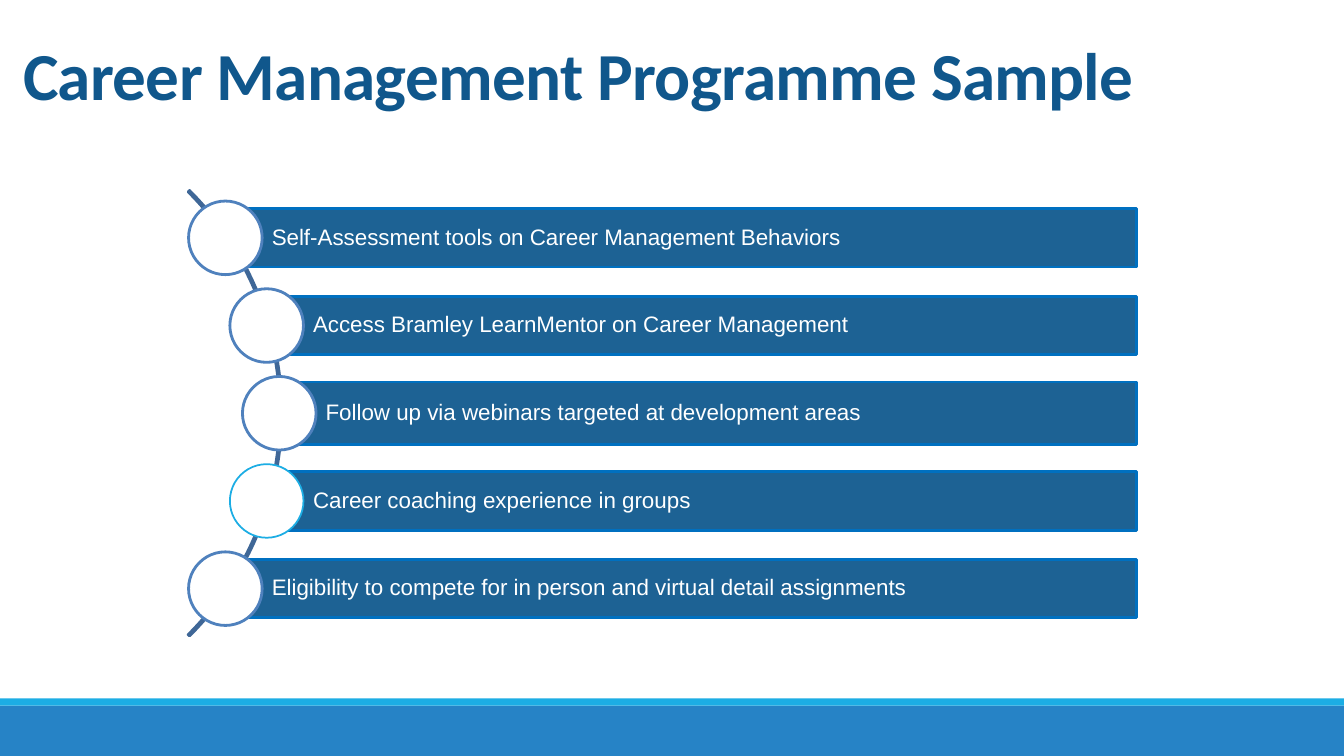
"""Build the career management programme slide."""
from math import sqrt
from pptx import Presentation
from pptx.dml.color import RGBColor
from pptx.enum import shapes, text
from pptx.oxml.ns import qn
from pptx.util import Inches, Pt

TITLE = "Career Management Programme Sample"
STEPS = [
    "Self-Assessment tools on Career Management Behaviors",
    "Access Bramley LearnMentor on Career Management",
    "Follow up via webinars targeted at development areas",
    "Career coaching experience in groups",
    "Eligibility to compete for in person and virtual detail assignments",
]
NAVY = RGBColor(0x10, 0x57, 0x8C)
STEEL = RGBColor(0x1D, 0x62, 0x94)
EDGE = RGBColor(0x00, 0x70, 0xC0)
SLATE = RGBColor(0x3F, 0x67, 0x97)
RING = RGBColor(0x4F, 0x81, 0xBD)
CYAN = RGBColor(0x1C, 0xAD, 0xE4)
BLUE = RGBColor(0x26, 0x83, 0xC6)
WHITE = RGBColor(0xFF, 0xFF, 0xFF)
PLAIN = "{2D5ABB26-0587-4C30-8999-92F81FD0307C}"

WIDE, HIGH = 13.33, 7.5
ARC_X, ARC_Y, ARC_D = -0.33, 4.1, 6.25
TRACK, GAP, DOT = 3.1, 0.87, 0.73
RIGHT, MIDDLE, ACCENT = 11.27, 2, 3

deck = Presentation()
deck.slide_width, deck.slide_height = Inches(WIDE), Inches(HIGH)
slide = deck.slides.add_slide(deck.slide_layouts[6])


def draw(kind, x, y, w, h, fill=None, line=None, size=2):
    """Add a flat shape with the given fill and line."""
    shape = slide.shapes.add_shape(kind, Inches(x), Inches(y), Inches(w), Inches(h))
    shape.shadow.inherit = False
    if fill is None:
        shape.fill.background()
    else:
        shape.fill.solid()
        shape.fill.fore_color.rgb = fill
    if line is None:
        shape.line.fill.background()
    else:
        shape.line.color.rgb = line
        shape.line.width = Pt(size)
    return shape


def write(shape, words, face, size, color, bold=False):
    """Put one left-aligned line, centred in height, in a shape."""
    frame = shape.text_frame
    frame.word_wrap = True
    frame.vertical_anchor = text.MSO_ANCHOR.MIDDLE
    para = frame.paragraphs[0]
    para.text = words
    para.alignment = text.PP_ALIGN.LEFT
    para.line_spacing = 0.9
    font = para.font
    font.name, font.size, font.bold = face, Pt(size), bold
    font.color.rgb = color
    return para


KIND = shapes.MSO_SHAPE
draw(KIND.RECTANGLE, 0, 7, WIDE, 0.5, BLUE)
draw(KIND.RECTANGLE, 0, 6.93, WIDE, 0.07, CYAN)

title = slide.shapes.add_textbox(Inches(0.13), Inches(0.49), Inches(11.48), Inches(0.59))
head = write(title, TITLE, "Calibri", 48, NAVY, True)
head.font._rPr.set("spc", "-50")

grid = slide.shapes.add_table(1, 1, Inches(0.64), Inches(3.9), Inches(8.89), Inches(0.41)).table
grid.first_row = grid.horz_banding = False
grid._tbl.tblPr.find(qn("a:tableStyleId")).text = PLAIN
grid.cell(0, 0).fill.background()

arc = draw(KIND.BLOCK_ARC, ARC_X - ARC_D / 2, ARC_Y - ARC_D / 2, ARC_D, ARC_D, line=SLATE)
for i, value in enumerate((189, 27, 0.003)):
    arc.adjustments[i] = value

for i, words in enumerate(STEPS):
    rise = (i - MIDDLE) * GAP
    x, y = ARC_X + sqrt(TRACK ** 2 - rise ** 2), ARC_Y + rise
    tall = 0.62 if i == MIDDLE else 0.58
    bar = draw(KIND.RECTANGLE, x, y - tall / 2, RIGHT - x, tall, STEEL, EDGE)
    frame = bar.text_frame
    frame.margin_left = Inches(0.46)
    frame.margin_right = frame.margin_top = frame.margin_bottom = Inches(0.04)
    write(bar, words, "Arial", 16, WHITE)
    ring, size = (CYAN, 1.25) if i == ACCENT else (RING, 2)
    draw(KIND.OVAL, x - DOT / 2, y - DOT / 2, DOT, DOT, WHITE, ring, size)

deck.save("out.pptx")
